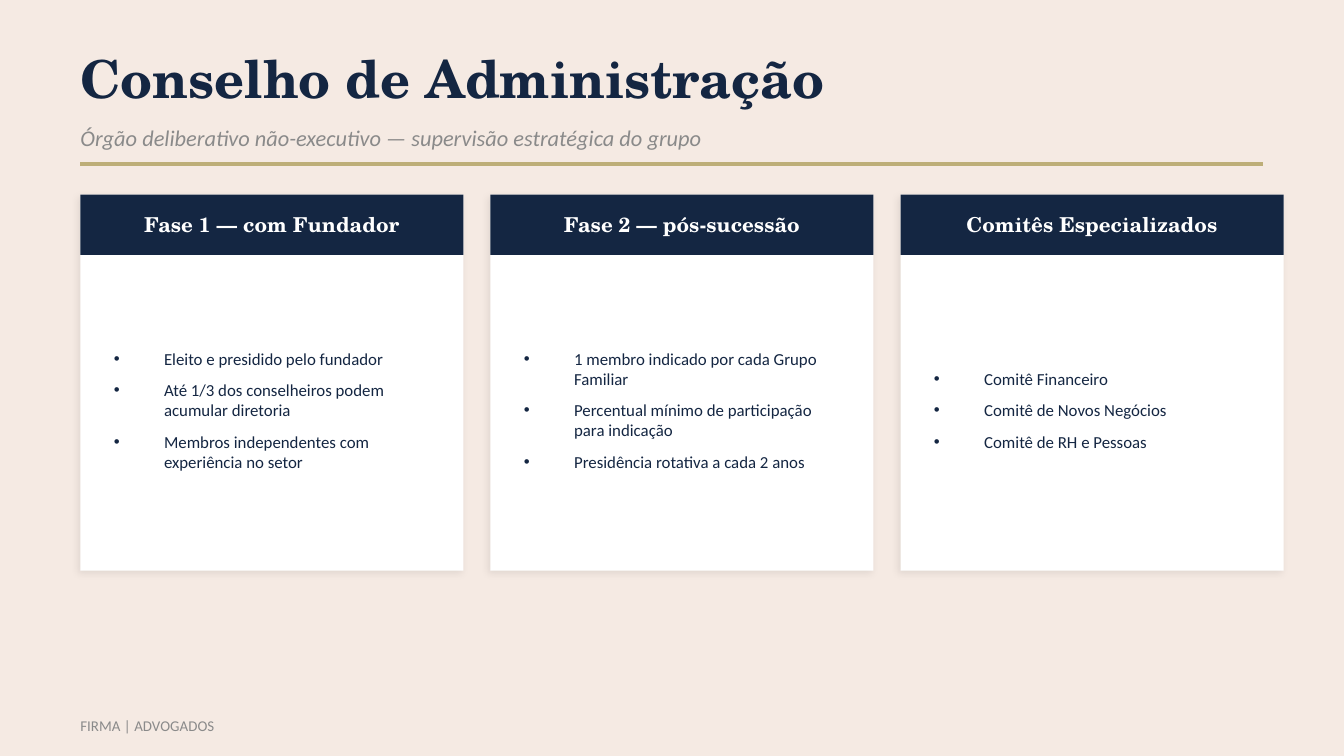
from lxml import etree
from pptx import Presentation
from pptx.dml.color import RGBColor
from pptx.enum.shapes import MSO_CONNECTOR, MSO_SHAPE
from pptx.enum.text import MSO_ANCHOR, MSO_AUTO_SIZE, PP_ALIGN
from pptx.oxml.ns import qn
from pptx.util import Cm, Pt

RECTANGLE = MSO_SHAPE.RECTANGLE
STRAIGHT = MSO_CONNECTOR.STRAIGHT
MIDDLE = MSO_ANCHOR.MIDDLE
NO_AUTOFIT = MSO_AUTO_SIZE.NONE
LEFT, CENTER = PP_ALIGN.LEFT, PP_ALIGN.CENTER

TITLE = "Conselho de Administração"
SUBTITLE = "Órgão deliberativo não-executivo — supervisão estratégica do grupo"
FOOTER = "FIRMA | ADVOGADOS"
CARDS = [
    ("Fase 1 — com Fundador", [
        "Eleito e presidido pelo fundador",
        "Até 1/3 dos conselheiros podem acumular diretoria",
        "Membros independentes com experiência no setor",
    ]),
    ("Fase 2 — pós-sucessão", [
        "1 membro indicado por cada Grupo Familiar",
        "Percentual mínimo de participação para indicação",
        "Presidência rotativa a cada 2 anos",
    ]),
    ("Comitês Especializados", [
        "Comitê Financeiro",
        "Comitê de Novos Negócios",
        "Comitê de RH e Pessoas",
    ]),
]

COLORS = {
    "background": "F5EAE3",
    "navy": "142642",
    "gray": "8A8A8A",
    "gold": "BDAE78",
    "white": "FFFFFF",
    "shadow": "000000",
}
SERIF, SANS = "TeX Gyre Schola", "Calibri"

MARGIN = 1.52
CONTENT_WIDTH = 22.35
CARD_TOP, CARD_WIDTH, CARD_HEIGHT, CARD_GAP = 3.68, 7.24, 7.11, 0.51
HEADER_HEIGHT = 1.14
LIST_INSET, LIST_TOP, LIST_HEIGHT = 0.38, 5.21, 5.08
BULLET_INDENT = 0.95


def color(name):
    return RGBColor.from_string(COLORS[name])


def place(shape, left, top, width, height):
    shape.left, shape.top = Cm(left), Cm(top)
    shape.width, shape.height = Cm(width), Cm(height)


def write(shape, lines, font, size, ink, bold=False, italic=False,
          align=LEFT, inset=(0, 0), after=0, bullet=False):
    frame = shape.text_frame
    frame.word_wrap = True
    frame.auto_size = NO_AUTOFIT
    frame.vertical_anchor = MIDDLE
    frame.margin_left = frame.margin_right = Cm(inset[0])
    frame.margin_top = frame.margin_bottom = Cm(inset[1])
    for index, line in enumerate(lines):
        paragraph = frame.add_paragraph() if index else frame.paragraphs[0]
        paragraph.alignment = align
        paragraph.space_before, paragraph.space_after = Pt(0), Pt(after)
        properties = paragraph._p.get_or_add_pPr()
        indent = Cm(BULLET_INDENT) if bullet else 0
        properties.set("marL", str(indent))
        properties.set("indent", str(-indent))
        if bullet:
            etree.SubElement(properties, qn("a:buChar"), char="•")
        else:
            etree.SubElement(properties, qn("a:buNone"))
        run = paragraph.add_run()
        run.text = line
        run.font.name, run.font.size = font, Pt(size)
        run.font.bold, run.font.italic = bold, italic
        run.font.color.rgb = color(ink)


def add_block(left, height, fill):
    block = slide.shapes.add_shape(
        RECTANGLE, Cm(left), Cm(CARD_TOP), Cm(CARD_WIDTH), Cm(height))
    block.shadow.inherit = False
    block.fill.solid()
    block.fill.fore_color.rgb = color(fill)
    block.line.fill.background()
    return block


def add_soft_shadow(block):
    effects = block._element.spPr.find(qn("a:effectLst"))
    shadow = etree.SubElement(
        effects, qn("a:outerShdw"), blurRad=str(Pt(4)), dist=str(Pt(2)),
        dir="8100000", algn="bl", rotWithShape="0")
    tint = etree.SubElement(shadow, qn("a:srgbClr"), val=COLORS["shadow"])
    etree.SubElement(tint, qn("a:alpha"), val="8000")


presentation = Presentation()
presentation.slide_width, presentation.slide_height = Cm(25.4), Cm(14.29)
slide = presentation.slides.add_slide(presentation.slide_layouts[4])
slide.background.fill.solid()
slide.background.fill.fore_color.rgb = color("background")
title, subtitle, *card_lists = slide.placeholders

place(title, MARGIN, 0.76, CONTENT_WIDTH, 1.4)
write(title, [TITLE], SERIF, 28, "navy", bold=True)
place(subtitle, MARGIN, 2.16, CONTENT_WIDTH, 0.89)
write(subtitle, [SUBTITLE], SANS, 12, "gray", italic=True)

rule = slide.shapes.add_connector(
    STRAIGHT, Cm(MARGIN), Cm(3.1), Cm(MARGIN + CONTENT_WIDTH), Cm(3.1))
rule.line.color.rgb = color("gold")
rule.line.width = Pt(2)
etree.SubElement(rule._element.spPr, qn("a:effectLst"))

footer = slide.shapes.add_textbox(Cm(MARGIN), Cm(13.34), Cm(7.62), Cm(0.76))
write(footer, [FOOTER], SANS, 8, "gray")

for column, ((heading, items), card_list) in enumerate(zip(CARDS, card_lists)):
    left = MARGIN + column * (CARD_WIDTH + CARD_GAP)
    add_soft_shadow(add_block(left, CARD_HEIGHT, "white"))
    header = add_block(left, HEADER_HEIGHT, "navy")
    write(header, [heading], SERIF, 11, "white", bold=True, align=CENTER)
    place(card_list, left + LIST_INSET, LIST_TOP,
          CARD_WIDTH - 2 * LIST_INSET, LIST_HEIGHT)
    write(card_list, items, SANS, 9, "navy", inset=(0.25, 0.13), after=6, bullet=True)
    slide.shapes._spTree.append(card_list._element)

presentation.save("out.pptx")
